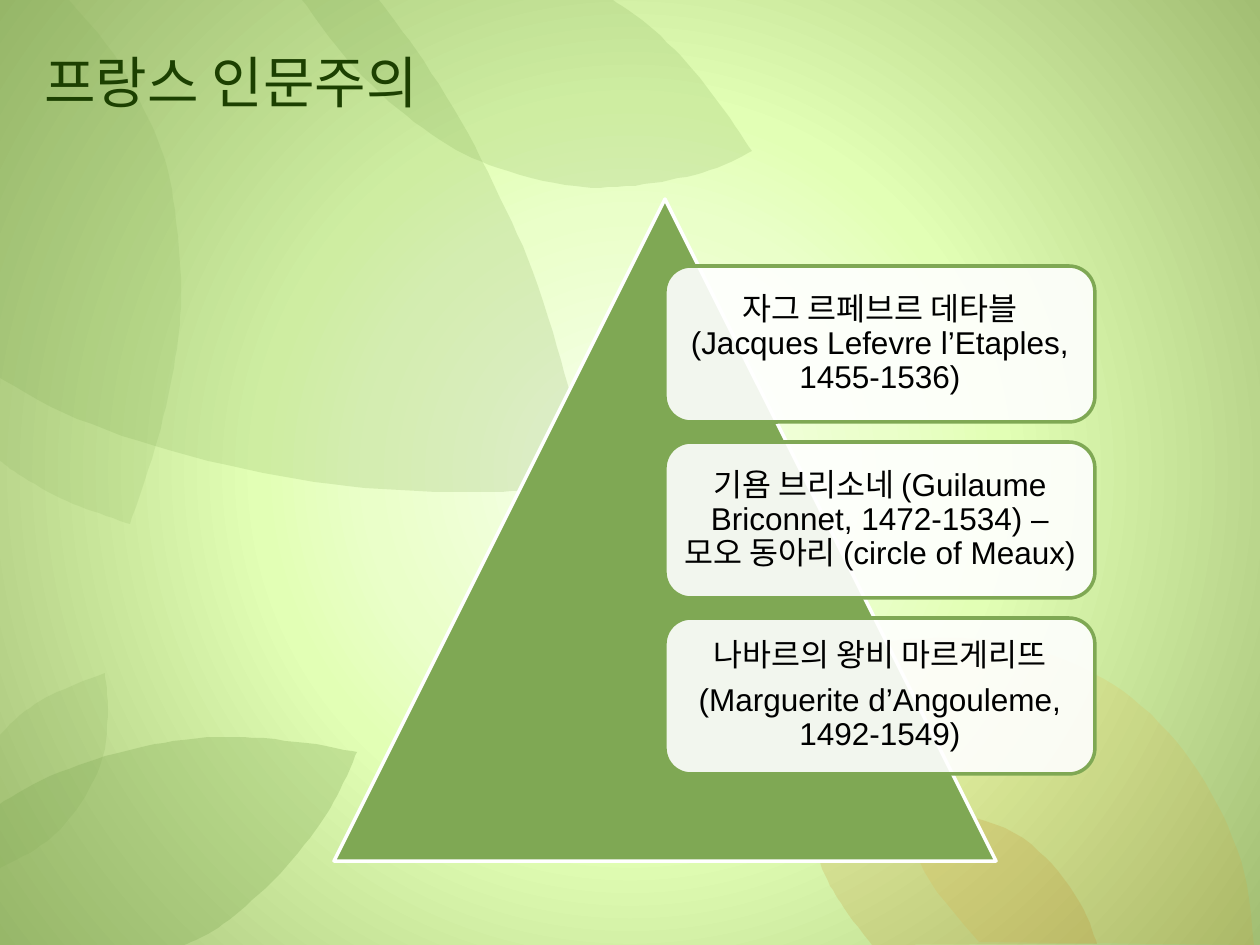
import pptx
import pptx.dml.color
import pptx.enum.shapes
import pptx.enum.text
import pptx.oxml
import pptx.oxml.ns
import pptx.oxml.xmlchemy
import pptx.util

SCALE = 914400 // 126
SHAPE = pptx.enum.shapes.MSO_SHAPE
ALIGN = pptx.enum.text.PP_ALIGN

THEME = {
    "green": "7FA854", "orange": "FD8A03", "amber": "BE6802",
    "white": "FFFFFF", "title": "1C4001", "body": "000000",
    "latin": "Arial", "korean": "Noto Sans CJK KR",
    "title_size": 32, "body_size": 18, "line": 2,
    "background": [(0, "F8FFEE"), (33, "EAFFC9"), (47, "E2FFB5"), (100, "A2BE73")],
}

TITLE = "프랑스 인문주의"
HUMANISTS = [
    ["자그 르페브르 데타블 (Jacques Lefevre l’Etaples, 1455-1536)"],
    ["기욤 브리소네 (Guilaume Briconnet, 1472-1534) – 모오 동아리 (circle of Meaux)"],
    ["나바르의 왕비 마르게리뜨", "(Marguerite d’Angouleme, 1492-1549)"],
]

LEAVES = [
    ("orange", 10, [
        [(885, 641), (944, 638), (1005, 642), (1065, 660), (1123, 691),
         (1176, 741), (1217, 804), (1244, 872), (1254, 945)],
        [(979, 942), (930, 881), (903, 818), (890, 756), (884, 683), (885, 641)]]),
    ("amber", 15, [
        [(813, 847), (852, 827), (889, 815), (934, 810), (1005, 828),
         (1052, 864), (1084, 910), (1097, 944)],
        [(872, 945), (844, 908), (828, 881), (813, 847)]]),
    ("green", 15, [
        [(0, 461), (0, 0)],
        [(69, 0), (113, 53), (142, 106), (163, 154), (175, 210), (181, 289),
         (178, 340), (168, 397), (152, 459), (130, 524)],
        [(130, 524), (92, 511), (54, 495), (18, 474), (0, 461)]]),
    ("green", 20, [
        [(591, 485), (532, 490), (466, 492), (364, 488), (263, 473),
         (155, 446), (64, 413), (0, 378)],
        [(0, 0), (379, 0)],
        [(379, 0), (417, 51), (461, 121), (500, 198), (533, 272),
         (561, 360), (577, 421), (591, 485)]]),
    ("green", 20, [
        [(302, 0), (613, 0)],
        [(613, 0), (648, 25), (687, 63), (724, 110), (752, 151)],
        [(752, 151), (717, 168), (670, 180), (617, 187), (565, 185),
         (498, 168), (448, 145), (397, 108), (346, 58), (302, 0)]]),
    ("green", 17, [
        [(105, 673), (108, 709), (103, 756), (88, 791), (64, 825), (36, 849), (0, 868)],
        [(0, 735), (25, 711), (57, 692), (105, 673)]]),
    ("green", 30, [
        [(0, 804), (42, 780), (97, 759), (146, 746), (200, 738), (244, 737),
         (306, 743), (357, 752)],
        [(357, 752), (340, 790), (320, 824), (286, 867), (246, 906), (213, 931), (184, 945)],
        [(0, 945), (0, 804)]]),
]


def px(*values):
    return [pptx.util.Emu(round(v * SCALE)) for v in values]


def rgb(name):
    return pptx.dml.color.RGBColor.from_string(THEME[name])


def smooth(points, steps=6):
    if len(points) == 2:
        return points
    padded = [points[0], *points, points[-1]]
    curve = [points[0]]
    for a, b, c, d in zip(padded, padded[1:], padded[2:], padded[3:]):
        for i in range(1, steps + 1):
            t = i / steps
            curve.append(tuple(
                (2 * q + (r - p) * t + (2 * p - 5 * q + 4 * r - s) * t ** 2
                 + (3 * q - p - 3 * r + s) * t ** 3) / 2
                for p, q, r, s in zip(a, b, c, d)))
    return curve


def make_element(tag, name, value):
    node = pptx.oxml.xmlchemy.OxmlElement(tag)
    node.set(name, value)
    return node


def style(sp, fill, alpha=100, line=None):
    sp.shadow.inherit = False
    sp.fill.solid()
    sp.fill.fore_color.rgb = rgb(fill)
    if alpha < 100:
        clr = sp.element.spPr.find(".//" + pptx.oxml.ns.qn("a:srgbClr"))
        clr.append(make_element("a:alpha", "val", str(alpha * 1000)))
    if line:
        sp.line.color.rgb = rgb(line)
        sp.line.width = pptx.util.Pt(THEME["line"])
    else:
        sp.line.fill.background()


def write(sp, lines, size, color, latin, align, inset=None, spacing=1.0, after=0):
    tf = sp.text_frame
    tf.word_wrap = True
    tf.vertical_anchor = pptx.enum.text.MSO_ANCHOR.MIDDLE
    if inset is not None:
        tf.margin_left = tf.margin_right = tf.margin_top = tf.margin_bottom = px(inset)[0]
    for i, text in enumerate(lines):
        p = tf.add_paragraph() if i else tf.paragraphs[0]
        p.alignment = align
        p.line_spacing = spacing
        p.space_after = pptx.util.Pt(after)
        r = p.add_run()
        r.text = text
        r.font.size = pptx.util.Pt(THEME[size])
        r.font.color.rgb = rgb(color)
        r.font.name = THEME[latin]
        font = r.font._element.find(pptx.oxml.ns.qn("a:latin"))
        font.addnext(make_element("a:ea", "typeface", THEME["korean"]))


def paint_background(slide):
    slide.background.fill.gradient()
    old = slide.element.find(".//" + pptx.oxml.ns.qn("a:gradFill"))
    stops = "".join(
        f'<a:gs pos="{pos * 1000}"><a:srgbClr val="{color}"/></a:gs>'
        for pos, color in THEME["background"])
    new = pptx.oxml.parse_xml(
        f'<a:gradFill {pptx.oxml.ns.nsdecls("a")} rotWithShape="1">'
        f'<a:gsLst>{stops}</a:gsLst><a:path path="circle">'
        '<a:fillToRect l="20000" t="30000" r="20000" b="30000"/></a:path></a:gradFill>')
    old.getparent().replace(old, new)


def draw_leaf(slide, color, alpha, edges):
    points = [point for edge in edges for point in smooth(edge)]
    builder = slide.shapes.build_freeform(*points[0], scale=SCALE)
    builder.add_line_segments(points[1:], close=True)
    style(builder.convert_to_shape(), color, alpha)


def main():
    prs = pptx.Presentation()
    prs.slide_width, prs.slide_height = px(1260, 945)
    slide = prs.slides.add_slide(prs.slide_layouts[6])
    paint_background(slide)
    for leaf in LEAVES:
        draw_leaf(slide, *leaf)

    title = slide.shapes.add_textbox(*px(32, 24, 1196, 115))
    write(title, [TITLE], "title_size", "title", "korean", ALIGN.LEFT)

    pyramid = slide.shapes.add_shape(SHAPE.ISOSCELES_TRIANGLE, *px(334, 199, 662, 662))
    style(pyramid, "green", line="white")

    left, top, width, height, gap = 665, 266, 430, 156, 20
    for i, lines in enumerate(HUMANISTS):
        card = slide.shapes.add_shape(
            SHAPE.ROUNDED_RECTANGLE, *px(left, top + i * (height + gap), width, height))
        style(card, "white", alpha=90, line="green")
        write(card, lines, "body_size", "body", "latin", ALIGN.CENTER,
              inset=9, spacing=0.9, after=6)

    prs.save("out.pptx")


if __name__ == "__main__":
    main()
